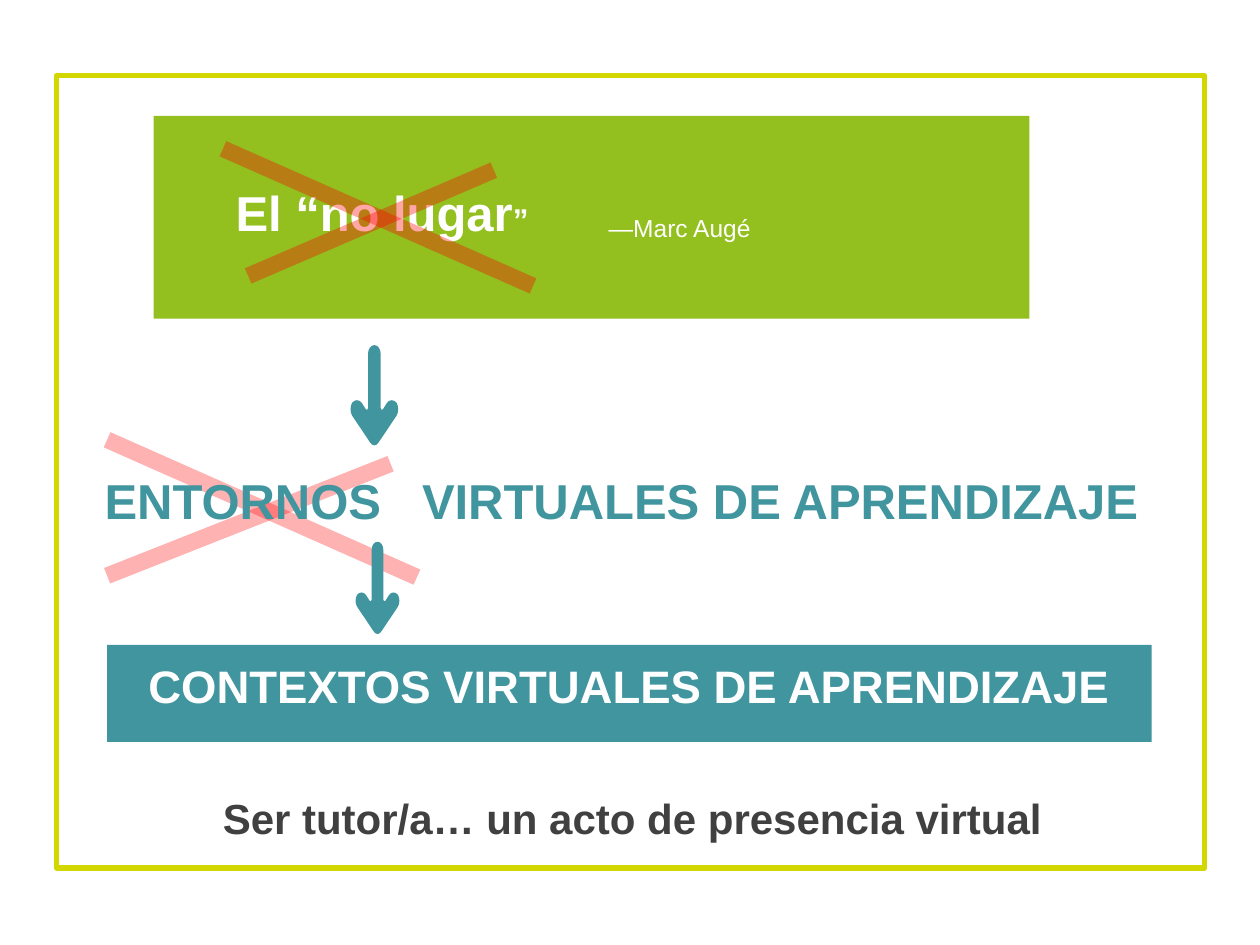
from dataclasses import dataclass
from typing import NamedTuple

from lxml.etree import SubElement
from pptx import Presentation
from pptx.dml.color import RGBColor
from pptx.enum.shapes import MSO_CONNECTOR as Connector, MSO_SHAPE as Preset
from pptx.enum.text import MSO_ANCHOR as Anchor, MSO_AUTO_SIZE as AutoSize, PP_ALIGN as Align
from pptx.oxml.ns import qn
from pptx.util import Pt


@dataclass(frozen=True)
class Theme:
    font: str = "Arial"
    white: str = "FFFFFF"
    green: str = "93C01F"
    teal: str = "40959F"
    lime: str = "D2D700"
    red: str = "FF0000"
    dark: str = "404040"
    heading: int = 28
    context: int = 26
    closing: int = 24
    quote_mark: int = 18
    author: int = 14
    strike_width: float = 9.5
    frame_width: float = 3
    inset: float = 7.2


class Box(NamedTuple):
    left: float
    top: float
    width: float
    height: float


class Strike(NamedTuple):
    start: tuple[float, float]
    end: tuple[float, float]
    opacity: int


class Arrow(NamedTuple):
    center: float
    top: float
    scale: float


class Style(NamedTuple):
    size: float
    color: str
    bold: bool = True
    align: Align = Align.CENTER


Point = tuple[float, float]
Segment = list[Point]

THEME = Theme()
STRIKES_NO_LUGAR = [
    Strike((127.4, 85), (304.6, 163.4), 35),
    Strike((141.8, 157.7), (282.2, 97.2), 35),
]
STRIKES_ENTORNOS = [
    Strike((61.2, 251.3), (238.3, 329.8), 30),
    Strike((61.2, 329), (223.2, 265), 30),
]
ARROWS = [Arrow(213.9, 197.2, 1), Arrow(215.7, 309.6, 0.92)]
ARROW_LENGTH = 57.3
ARROW_HALF: list[Segment] = [
    [(2, 0), (3.6, 2.2), (3.6, 5)],
    [(3.6, 36)],
    [(3.6, 37), (4.3, 37.4), (4.9, 36.7)],
    [(7.2, 33)],
    [(8.6, 31), (11.3, 31), (12.7, 33)],
    [(13.3, 34), (13.6, 35.3), (13.6, 36.7)],
    [(13.6, 38), (13.3, 39.3), (12.7, 40.3)],
    [(2.6, 55.4)],
    [(1.9, 56.6), (1, 57.3), (0, 57.3)],
]


def color(value: str) -> RGBColor:
    return RGBColor.from_string(value)


def place(shape, box: Box) -> None:
    shape.left, shape.top, shape.width, shape.height = map(Pt, box)


def format_run(run, size: float, style: Style) -> None:
    run.font.name = THEME.font
    run.font.size = Pt(size)
    run.font.bold = style.bold
    run.font.color.rgb = color(style.color)


def write(shape, text: str, style: Style) -> None:
    frame = shape.text_frame
    frame.text = text
    frame.word_wrap = True
    frame.auto_size = AutoSize.NONE
    frame.vertical_anchor = Anchor.TOP
    frame.margin_left = frame.margin_right = Pt(THEME.inset)
    frame.margin_top = frame.margin_bottom = Pt(THEME.inset)
    paragraph = frame.paragraphs[0]
    paragraph.alignment = style.align
    paragraph.line_spacing = 1.0
    paragraph.space_before = Pt(0)
    for run in paragraph.runs:
        format_run(run, style.size, style)


def add_panel(slide, box: Box, fill: str):
    panel = slide.shapes.add_shape(Preset.RECTANGLE, *map(Pt, box))
    panel.shadow.inherit = False
    panel.fill.solid()
    panel.fill.fore_color.rgb = color(fill)
    panel.line.fill.background()
    return panel


def add_label(slide, box: Box, text: str, style: Style):
    label = slide.shapes.add_textbox(*map(Pt, box))
    write(label, text, style)
    return label


def add_strike(slide, strike: Strike) -> None:
    line = slide.shapes.add_connector(
        Connector.STRAIGHT, *map(Pt, strike.start + strike.end)
    )
    line.line.width = Pt(THEME.strike_width)
    line.line.color.rgb = color(THEME.red)
    tint = line.element.find(".//" + qn("a:srgbClr"))
    SubElement(tint, qn("a:alpha"), val=str(strike.opacity * 1000))
    SubElement(line.element.spPr, qn("a:effectLst"))


def arrow_outline() -> list[Segment]:
    starts = [(0, 0)] + [segment[-1] for segment in ARROW_HALF]
    mirrored = [
        [(-x, y) for x, y in [*segment[-2::-1], start]]
        for start, segment in zip(starts, ARROW_HALF)
    ]
    return ARROW_HALF + mirrored[::-1]


def add_arrow(slide, arrow: Arrow) -> None:
    middle = arrow.top + ARROW_LENGTH * arrow.scale / 2

    def turned(point: Point) -> Point:
        x, y = point
        along = (y - ARROW_LENGTH / 2) * arrow.scale
        return Pt(arrow.center + along), Pt(middle - x * arrow.scale)

    outline = [[turned(point) for point in segment] for segment in arrow_outline()]
    builder = slide.shapes.build_freeform(*outline[-1][-1])
    builder.add_line_segments([segment[-1] for segment in outline], close=True)
    shape = builder.convert_to_shape()
    for edge, segment in zip(list(shape.element.iter(qn("a:lnTo"))), outline):
        if len(segment) == 3:
            curve = edge.makeelement(qn("a:cubicBezTo"))
            for x, y in segment:
                SubElement(curve, qn("a:pt"), x=str(x - shape.left), y=str(y - shape.top))
            edge.getparent().replace(edge, curve)
    shape.rotation = 90
    shape.shadow.inherit = False
    shape.fill.solid()
    shape.fill.fore_color.rgb = color(THEME.teal)
    shape.line.fill.background()


def add_frame(slide, box: Box) -> None:
    frame = slide.shapes.add_shape(Preset.RECTANGLE, *map(Pt, box))
    frame.shadow.inherit = False
    frame.fill.background()
    frame.line.width = Pt(THEME.frame_width)
    frame.line.color.rgb = color(THEME.lime)
    SubElement(frame.element.spPr.find(qn("a:ln")), qn("a:round"))


def main() -> None:
    deck = Presentation()
    deck.slide_width, deck.slide_height = Pt(720), Pt(540)
    slide = deck.slides.add_slide(deck.slide_layouts[0])
    title, author = slide.placeholders

    banner = add_panel(slide, Box(87.8, 66.2, 500.4, 115.9), THEME.green)
    title.element.addprevious(banner.element)

    title_style = Style(THEME.heading, THEME.white, align=Align.LEFT)
    place(title, Box(127.4, 97.2, 407.5, 55.4))
    write(title, "El “no lugar", title_style)
    closing_quote = title.text_frame.paragraphs[0].add_run()
    closing_quote.text = "”"
    format_run(closing_quote, THEME.quote_mark, title_style)

    place(author, Box(340.6, 114.5, 116, 27.4))
    write(author, "—Marc Augé", Style(THEME.author, THEME.white, False, Align.LEFT))

    for strike in STRIKES_NO_LUGAR:
        add_strike(slide, strike)

    contexts = add_panel(slide, Box(61.2, 368.6, 596.9, 55.4), THEME.teal)
    write(contexts, "CONTEXTOS VIRTUALES DE APRENDIZAJE", Style(THEME.context, THEME.white))

    for strike in STRIKES_ENTORNOS:
        add_strike(slide, strike)

    environments = add_label(
        slide, Box(49.7, 261.4, 618.5, 55.4), "ENTORNOS\tVIRTUALES DE APRENDIZAJE",
        Style(THEME.heading, THEME.teal, align=Align.LEFT),
    )
    environments.text_frame.margin_left = Pt(10.1)
    properties = environments.text_frame.paragraphs[0]._p.get_or_add_pPr()
    tabs = SubElement(properties, qn("a:tabLst"))
    SubElement(tabs, qn("a:tab"), pos=str(Pt(181.4)), algn="l")

    for arrow in ARROWS:
        add_arrow(slide, arrow)

    add_frame(slide, Box(32.4, 43.2, 655.9, 452.9))
    add_label(
        slide, Box(37.4, 445.7, 648, 43.2), "Ser tutor/a… un acto de presencia virtual",
        Style(THEME.closing, THEME.dark),
    )
    deck.save("out.pptx")


if __name__ == "__main__":
    main()
